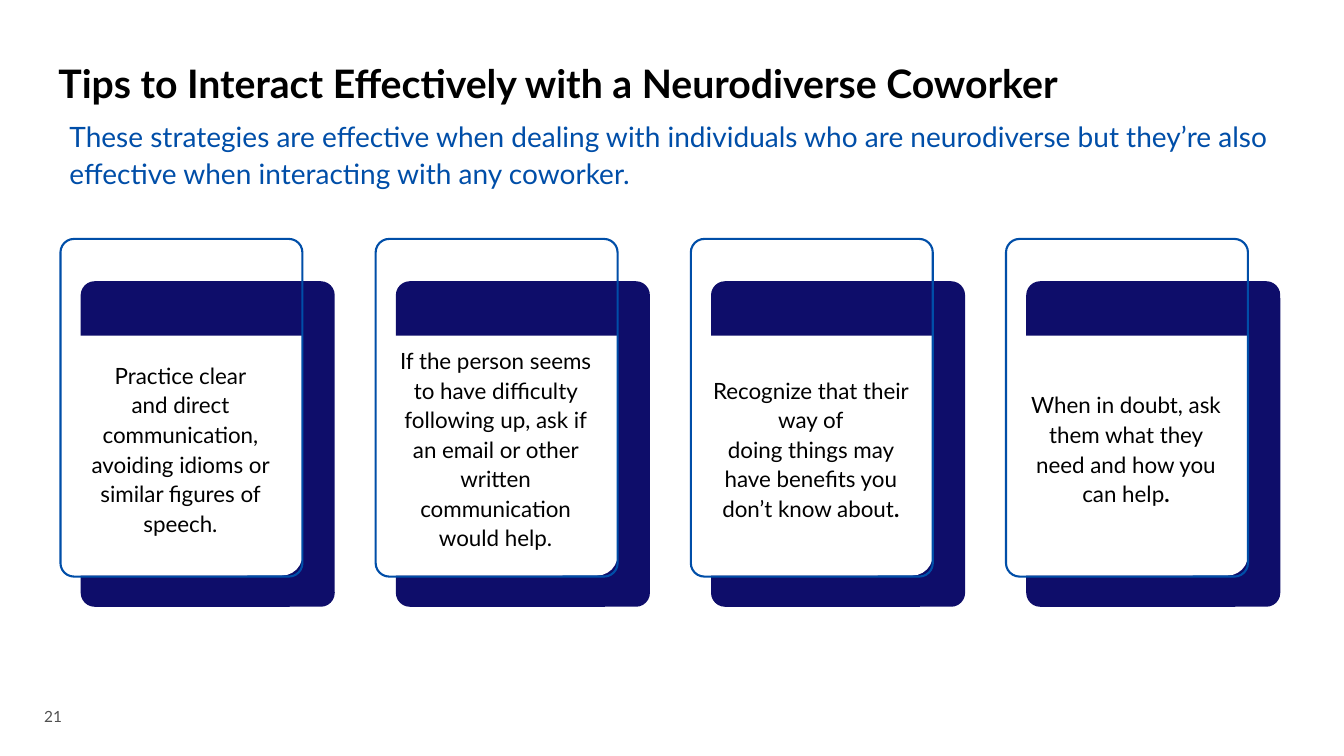
from dataclasses import dataclass

from pptx import Presentation
from pptx.dml.color import RGBColor
from pptx.enum.shapes import MSO_SHAPE
from pptx.enum.text import MSO_ANCHOR, MSO_AUTO_SIZE, PP_ALIGN
from pptx.util import Inches, Pt


@dataclass(frozen=True)
class Theme:
    font: str = "Lato"
    black: RGBColor = RGBColor.from_string("000000")
    white: RGBColor = RGBColor.from_string("FFFFFF")
    navy: RGBColor = RGBColor.from_string("0E0D6A")
    blue: RGBColor = RGBColor.from_string("004EA8")
    gray: RGBColor = RGBColor.from_string("505050")
    title_size: Pt = Pt(28)
    intro_size: Pt = Pt(20)
    tip_size: Pt = Pt(16)
    number_size: Pt = Pt(11)


theme = Theme()


def write(frame, lines, size, color, anchor=MSO_ANCHOR.TOP,
          align=PP_ALIGN.LEFT, spacing=1.1):
    """Fill a text frame with one paragraph per line, all in one style."""
    frame.word_wrap = True
    frame.auto_size = MSO_AUTO_SIZE.NONE
    frame.vertical_anchor = anchor
    for index, line in enumerate(lines):
        paragraph = frame.add_paragraph() if index else frame.paragraphs[0]
        paragraph.add_run().text = line
        paragraph.alignment = align
        paragraph.line_spacing = spacing
        paragraph.font.name = theme.font
        paragraph.font.size = size
        paragraph.font.color.rgb = color


def add_panel(shapes, kind, box, corners, fill=None, outline=None):
    panel = shapes.add_shape(kind, *map(Inches, box))
    panel.shadow.inherit = False
    for index, corner in enumerate(corners):
        panel.adjustments[index] = corner
    if fill is None:
        panel.fill.background()
    else:
        panel.fill.solid()
        panel.fill.fore_color.rgb = fill
    if outline is None:
        panel.line.fill.background()
    else:
        panel.line.color.rgb = outline
        panel.line.width = Pt(1.5)


presentation = Presentation()
presentation.slide_width = Inches(13.33)
presentation.slide_height = Inches(7.5)
slide = presentation.slides.add_slide(presentation.slide_layouts[5])

title = slide.shapes.title
title.left, title.top = Inches(0.38), Inches(0.5)
title.width, title.height = Inches(12.76), Inches(0.6)
write(title.text_frame, ["Tips to Interact Effectively with a Neurodiverse Coworker"],
      theme.title_size, theme.black, MSO_ANCHOR.MIDDLE)
title.text_frame.margin_left = Inches(0.2)
title.text_frame.paragraphs[0].font.bold = True

intro = slide.shapes.add_textbox(Inches(0.59), Inches(1.1), Inches(12.11), Inches(0.79))
write(intro.text_frame,
      ["These strategies are effective when dealing with individuals who are neurodiverse "
       "but they’re also effective when interacting with any coworker."],
      theme.intro_size, theme.blue)

# Each tip: its lines, and the bold ending of the last line
tips = [
    (["Practice clear",
      "and direct communication, avoiding idioms or similar figures of speech."], ""),
    (["If the person seems to have difficulty following up, ask if an email "
      "or other written communication would help."], ""),
    (["Recognize that their way of",
      "doing things may have benefits you don’t know about"], "."),
    (["When in doubt, ask them what they need and how you can help"], "."),
]
first_card_left, card_pitch = 0.59, 3.126

for index, (lines, bold_ending) in enumerate(tips):
    left = first_card_left + index * card_pitch
    card = slide.shapes.add_group_shape().shapes
    add_panel(card, MSO_SHAPE.ROUNDED_RECTANGLE, (left + 0.21, 2.79, 2.52, 3.23),
              [0.055], fill=theme.navy)
    add_panel(card, MSO_SHAPE.ROUND_2_SAME_RECTANGLE, (left, 3.33, 2.41, 2.38),
              [0, 0.086], fill=theme.white)
    tip = card.add_textbox(Inches(left + 0.11), Inches(3.33), Inches(2.18), Inches(2.23))
    write(tip.text_frame, lines, theme.tip_size, theme.black,
          MSO_ANCHOR.MIDDLE, PP_ALIGN.CENTER)
    if bold_ending:
        ending = tip.text_frame.paragraphs[-1].add_run()
        ending.text = bold_ending
        ending.font.bold = True
    add_panel(card, MSO_SHAPE.ROUNDED_RECTANGLE, (left + 0.01, 2.37, 2.4, 3.35),
              [0.056], outline=theme.blue)

page_number = slide.shapes.add_textbox(Inches(0.34), Inches(6.97), Inches(0.5), Inches(0.28))
write(page_number.text_frame, ["21"], theme.number_size, theme.gray,
      MSO_ANCHOR.BOTTOM, spacing=1.0)

presentation.save("out.pptx")
